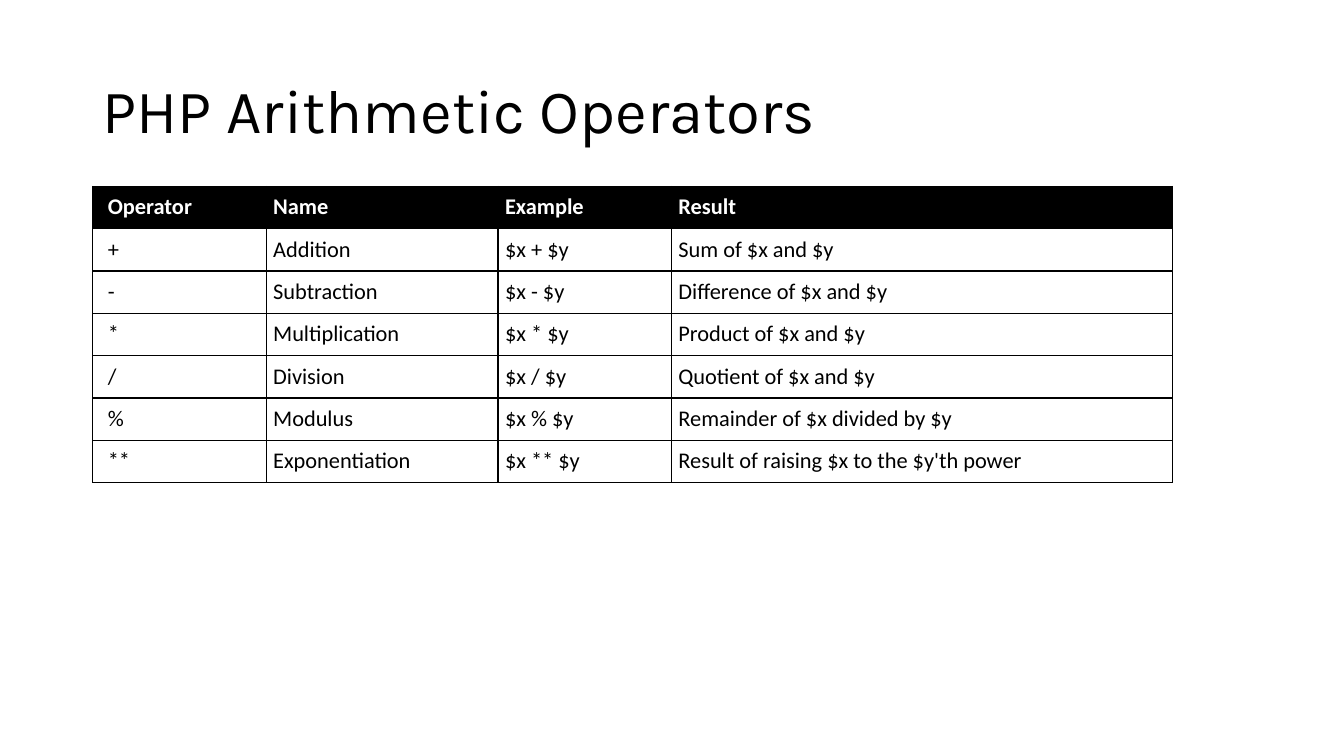
from dataclasses import dataclass

from lxml import etree
from pptx import Presentation
from pptx.dml.color import RGBColor
from pptx.enum.text import MSO_ANCHOR
from pptx.oxml.ns import qn
from pptx.util import Inches, Pt

MIDDLE = MSO_ANCHOR.MIDDLE
TOP = MSO_ANCHOR.TOP
BLANK_LAYOUT = 6


@dataclass(frozen=True)
class Theme:
    """Colours, fonts and sizes of the slide."""
    ink: RGBColor = RGBColor(0, 0, 0)
    paper: RGBColor = RGBColor(255, 255, 255)
    title_font: str = "Karla"
    table_font: str = "Calibri"
    title_size: int = 44
    table_size: int = 16
    border_width: int = 1


THEME = Theme()
TITLE_BOX = (0.92, 0.4, 11.5, 1.45)
TABLE_BOX = (0.92, 1.85, 10.71, 2.94)
COLUMN_WIDTHS = (1.72, 2.3, 1.72, 4.97)
CELL_INSET = 0.07
FIRST_INSET = 0.15
OPERATORS = (
    ("Operator", "Name", "Example", "Result"),
    ("+", "Addition", "$x + $y", "Sum of $x and $y"),
    ("-", "Subtraction", "$x - $y", "Difference of $x and $y"),
    ("*", "Multiplication", "$x * $y", "Product of $x and $y"),
    ("/", "Division", "$x / $y", "Quotient of $x and $y"),
    ("%", "Modulus", "$x % $y", "Remainder of $x divided by $y"),
    ("**", "Exponentiation", "$x ** $y", "Result of raising $x to the $y'th power"),
)


def apply(target, values):
    """Set each attribute of the target from a dict."""
    for name, value in values.items():
        setattr(target, name, value)


def write(para, text, color, **font):
    """Add one formatted span to a paragraph."""
    span = para.add_run()
    span.text = text
    apply(span.font, font)
    span.font.color.rgb = color


def add_borders(cell):
    """Draw a solid line on all four sides of a cell."""
    properties = cell._tc.get_or_add_tcPr()
    for index, side in enumerate(("a:lnL", "a:lnR", "a:lnT", "a:lnB")):
        line = etree.Element(qn(side), w=str(Pt(THEME.border_width)))
        fill = etree.SubElement(line, qn("a:solidFill"))
        etree.SubElement(fill, qn("a:srgbClr"), val=str(THEME.ink))
        properties.insert(index, line)


def add_title(page, box, text):
    """Place the slide title in its box."""
    frame = page.shapes.add_textbox(*map(Inches, box)).text_frame
    apply(frame, {"word_wrap": True, "vertical_anchor": MIDDLE})
    para = frame.paragraphs[0]
    para.line_spacing = 0.9
    write(para, text, THEME.ink, name=THEME.title_font, size=Pt(THEME.title_size))


def fill_cell(cell, text, is_header, is_first):
    """Format one table cell and write its text."""
    inset = Inches(CELL_INSET)
    apply(cell, {
        "margin_left": Inches(FIRST_INSET) if is_first else inset,
        "margin_right": inset,
        "margin_top": inset,
        "margin_bottom": inset,
        "vertical_anchor": TOP,
    })
    cell.fill.solid()
    cell.fill.fore_color.rgb = THEME.ink if is_header else THEME.paper
    add_borders(cell)
    write(cell.text_frame.paragraphs[0], text,
          THEME.paper if is_header else THEME.ink,
          name=THEME.table_font, size=Pt(THEME.table_size), bold=is_header)


def add_operator_table(page, box, rows):
    """Place the operator table in its box with equal row heights."""
    shape = page.shapes.add_table(len(rows), len(COLUMN_WIDTHS), *map(Inches, box))
    table = shape.table
    apply(table, {"first_row": True, "horz_banding": False})
    for column, width in zip(table.columns, COLUMN_WIDTHS):
        column.width = Inches(width)
    for row_index, texts in enumerate(rows):
        table.rows[row_index].height = Inches(box[3] / len(rows))
        for column_index, text in enumerate(texts):
            fill_cell(table.cell(row_index, column_index), text,
                      row_index == 0, column_index == 0)


def main():
    """Build and save the slide."""
    deck = Presentation()
    apply(deck, {"slide_width": Inches(13.33), "slide_height": Inches(7.5)})
    page = deck.slides.add_slide(deck.slide_layouts[BLANK_LAYOUT])
    add_title(page, TITLE_BOX, "PHP Arithmetic Operators")
    add_operator_table(page, TABLE_BOX, OPERATORS)
    deck.save("out.pptx")


if __name__ == "__main__":
    main()
